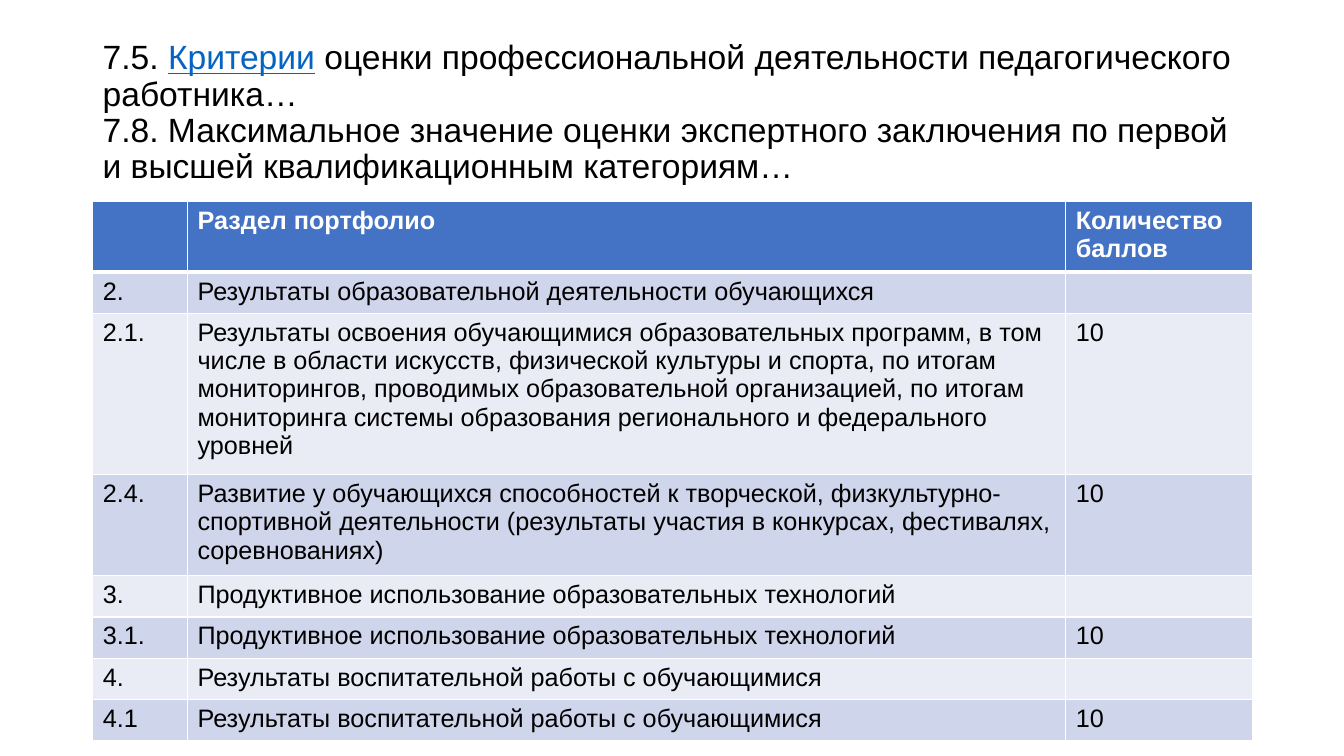
"""Build a slide with the assessment criteria and the portfolio score table."""
from lxml import etree
from pptx import Presentation
from pptx import util as u
from pptx.dml.color import RGBColor
from pptx.enum import text
from pptx.oxml.ns import qn

COLORS = {
    "text": "000000", "link": "0563C1", "white": "FFFFFF",
    "header": "4472C4", "odd": "CFD5EA", "even": "E9EBF5",
}
TITLE_LINES = [
    [("7.5. ", "text"), ("Критерии", "link"),
     (" оценки профессиональной деятельности педагогического работника…", "text")],
    [("7.8. Максимальное значение оценки экспертного заключения по первой "
      "и высшей квалификационным категориям…", "text")],
]
ROWS = [
    ("", "Раздел портфолио", "Количество баллов"),
    ("2.", "Результаты образовательной деятельности обучающихся", ""),
    ("2.1.", "Результаты освоения обучающимися образовательных программ, в том числе "
     "в области искусств, физической культуры и спорта, по итогам мониторингов, "
     "проводимых образовательной организацией, по итогам мониторинга системы "
     "образования регионального и федерального уровней", "10"),
    ("2.4.", "Развитие у обучающихся способностей к творческой, физкультурно-спортивной "
     "деятельности (результаты участия в конкурсах, фестивалях, соревнованиях)", "10"),
    ("3.", "Продуктивное использование образовательных технологий", ""),
    ("3.1.", "Продуктивное использование образовательных технологий", "10"),
    ("4.", "Результаты воспитательной работы с обучающимися", ""),
    ("4.1", "Результаты воспитательной работы с обучающимися", "10"),
]
COLUMN_WIDTHS = [0.94, 8.71, 1.85]
ROW_HEIGHT = 0.41
LEFT, WIDTH = 0.92, 11.5
TITLE_TOP, TITLE_HEIGHT, TABLE_TOP = 0.4, 1.45, 2


def add_run(paragraph, words, color, **values):
    run = paragraph.add_run()
    run.text = words
    for name, value in {"name": "Arial", **values}.items():
        setattr(run.font, name, value)
    run.font.color.rgb = RGBColor.from_string(COLORS[color])


def add_title(slide):
    box = slide.shapes.add_textbox(
        *map(u.Inches, (LEFT, TITLE_TOP, WIDTH, TITLE_HEIGHT)))
    frame = box.text_frame
    frame.word_wrap = True
    frame.vertical_anchor = text.MSO_ANCHOR.MIDDLE
    paragraph = frame.paragraphs[0]
    paragraph.line_spacing = 0.9
    for index, line in enumerate(TITLE_LINES):
        if index:
            paragraph.add_line_break()
        for words, color in line:
            add_run(paragraph, words, color, size=u.Pt(24), underline=color == "link")


def set_borders(cell, widths):
    properties = cell._tc.get_or_add_tcPr()
    for side, points in widths.items():
        line = etree.SubElement(properties, qn(f"a:ln{side}"), w=str(u.Pt(points)))
        fill = etree.SubElement(line, qn("a:solidFill"))
        etree.SubElement(fill, qn("a:srgbClr"), val=COLORS["white"])


def fill_cell(cell, words, row):
    header = row == 0
    set_borders(cell, {"L": 1, "R": 1, "T": 3 if row == 1 else 1, "B": 3 if header else 1})
    cell.fill.solid()
    band = "header" if header else ("even", "odd")[row % 2]
    cell.fill.fore_color.rgb = RGBColor.from_string(COLORS[band])
    if words:
        add_run(cell.text_frame.paragraphs[0], words, "white" if header else "text",
                size=u.Pt(18), bold=header)


def add_scores(slide):
    table = slide.shapes.add_table(
        len(ROWS), len(COLUMN_WIDTHS),
        *map(u.Inches, (LEFT, TABLE_TOP, WIDTH, ROW_HEIGHT * len(ROWS)))).table
    for column, width in zip(table.columns, COLUMN_WIDTHS):
        column.width = u.Inches(width)
    for row, values in enumerate(ROWS):
        table.rows[row].height = u.Inches(ROW_HEIGHT)
        for column, words in enumerate(values):
            fill_cell(table.cell(row, column), words, row)


def main():
    presentation = Presentation()
    presentation.slide_width = u.Inches(13.33)
    presentation.slide_height = u.Inches(7.5)
    slide = presentation.slides.add_slide(presentation.slide_layouts[6])
    add_title(slide)
    add_scores(slide)
    presentation.save("out.pptx")


if __name__ == "__main__":
    main()
